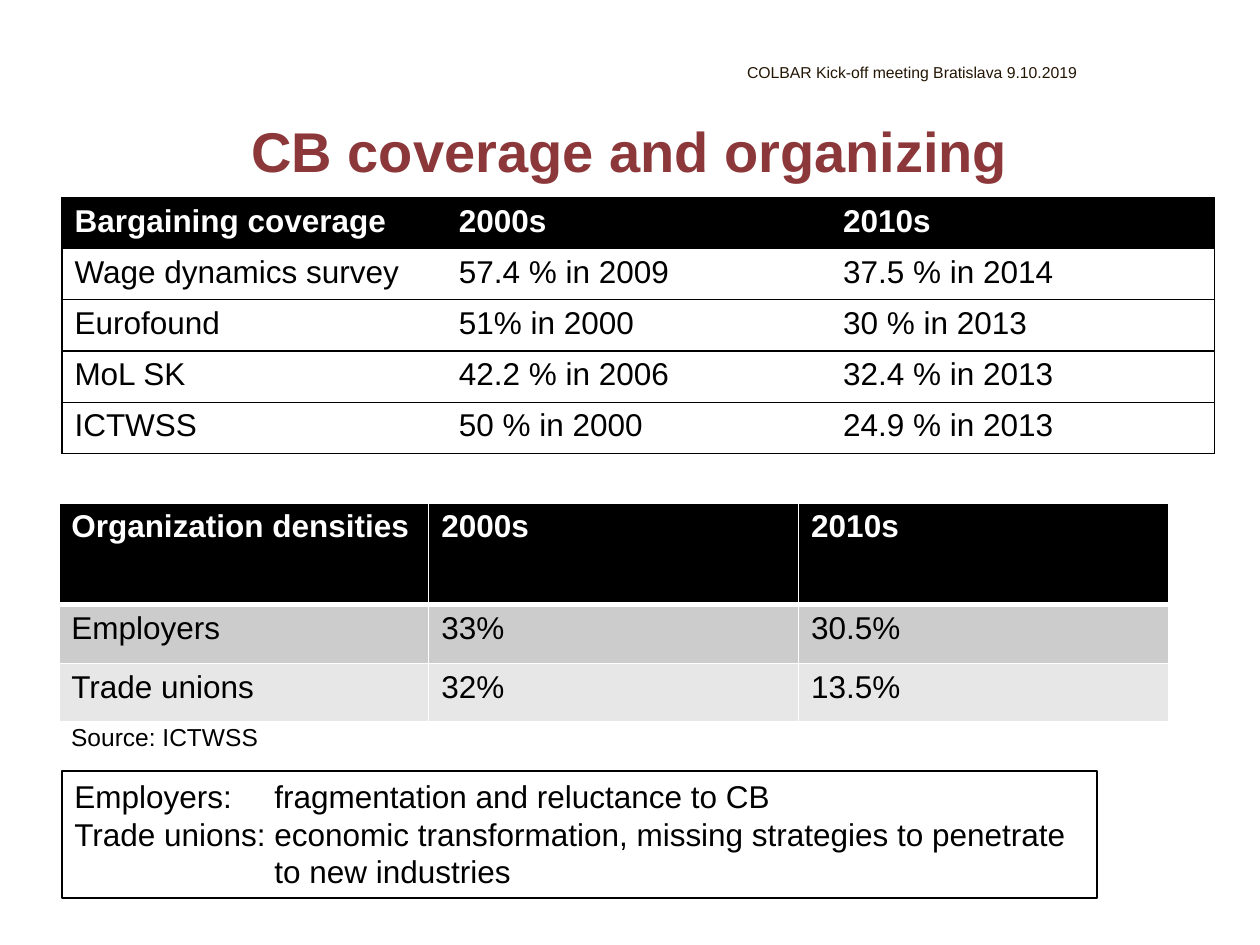
from dataclasses import dataclass

from pptx import Presentation
from pptx.dml.color import RGBColor
from pptx.enum.shapes import MSO_SHAPE
from pptx.enum.text import MSO_ANCHOR, PP_ALIGN
from pptx.oxml.xmlchemy import OxmlElement
from pptx.util import Pt


@dataclass(frozen=True)
class Theme:
    font: str = "Arial"
    black: str = "000000"
    white: str = "FFFFFF"
    title_color: str = "8C383A"
    meeting_color: str = "241605"
    bands: tuple = ("CCCCCC", "E7E7E7")
    title_size: float = 32
    body_size: float = 18
    source_size: float = 14
    meeting_size: float = 9


THEME = Theme()
TITLE = "CB coverage and organizing"
MEETING = "COLBAR Kick-off meeting Bratislava 9.10.2019"
SOURCE = "Source: ICTWSS"
COVERAGE = [
    ("Bargaining coverage", "2000s", "2010s"),
    ("Wage dynamics survey", "57.4 % in 2009", "37.5 % in 2014"),
    ("Eurofound", "51% in 2000", "30 % in 2013"),
    ("MoL SK", "42.2 % in 2006", "32.4 % in 2013"),
    ("ICTWSS", "50 % in 2000", "24.9 % in 2013"),
]
DENSITIES = [
    ("Organization densities", "2000s", "2010s"),
    ("Employers", "33%", "30.5%"),
    ("Trade unions", "32%", "13.5%"),
]
REASONS = [
    ("Employers:", "fragmentation and reluctance to CB"),
    ("Trade unions:", "economic transformation, missing strategies to penetrate to new industries"),
]
REASON_INDENT = 114.3


def style(paragraph, size, color, bold=False):
    paragraph.font.name = THEME.font
    paragraph.font.size = Pt(size)
    paragraph.font.bold = bold
    paragraph.font.color.rgb = RGBColor.from_string(color)


def add_text(slide, text, box, size, color, bold=False, align=PP_ALIGN.LEFT, anchor=MSO_ANCHOR.TOP):
    frame = slide.shapes.add_textbox(*map(Pt, box)).text_frame
    frame.word_wrap = True
    frame.vertical_anchor = anchor
    paragraph = frame.paragraphs[0]
    paragraph.text = text
    paragraph.alignment = align
    style(paragraph, size, color, bold)


def set_border(cell, side, color, width):
    line = OxmlElement(f"a:ln{side}")
    line.set("w", str(Pt(width)))
    fill = OxmlElement("a:solidFill" if color else "a:noFill")
    if color:
        value = OxmlElement("a:srgbClr")
        value.set("val", color)
        fill.append(value)
    line.append(fill)
    cell._tc.get_or_add_tcPr().append(line)


def coverage_border(side, row, column):
    inner = (side == "L" and column > 0) or (side == "R" and column < len(COVERAGE[0]) - 1)
    return (None if inner else THEME.black), 0.75


def density_border(side, row, column):
    under_header = (side, row) in (("B", 0), ("T", 1))
    return THEME.white, 3 if under_header else 1


def add_grid(slide, rows, left, top, column_width, heights, fills, border):
    columns = len(rows[0])
    table = slide.shapes.add_table(
        len(rows), columns, Pt(left), Pt(top), Pt(column_width * columns), Pt(sum(heights))
    ).table
    table.horz_banding = False
    for column in table.columns:
        column.width = Pt(column_width)
    for r, values in enumerate(rows):
        table.rows[r].height = Pt(heights[r])
        for c, value in enumerate(values):
            cell = table.cell(r, c)
            cell.text = value
            color = THEME.black if r else THEME.white
            style(cell.text_frame.paragraphs[0], THEME.body_size, color, bold=r == 0)
            for side in "LRTB":
                set_border(cell, side, *border(side, r, c))
            cell.fill.solid()
            cell.fill.fore_color.rgb = RGBColor.from_string(fills[r])


def add_reasons(slide):
    shape = slide.shapes.add_shape(MSO_SHAPE.RECTANGLE, Pt(35.4), Pt(440.4), Pt(591.4), Pt(72.7))
    shape.shadow.inherit = False
    shape.fill.background()
    shape.line.color.rgb = RGBColor.from_string(THEME.black)
    shape.line.width = Pt(1)
    frame = shape.text_frame
    frame.word_wrap = True
    frame.vertical_anchor = MSO_ANCHOR.TOP
    for index, reason in enumerate(REASONS):
        paragraph = frame.add_paragraph() if index else frame.paragraphs[0]
        paragraph.text = "\t".join(reason)
        paragraph.alignment = PP_ALIGN.LEFT
        properties = paragraph._p.get_or_add_pPr()
        properties.set("marL", str(Pt(REASON_INDENT)))
        properties.set("indent", str(-Pt(REASON_INDENT)))
        style(paragraph, THEME.body_size, THEME.black)


def main():
    """Build the slide on bargaining coverage and organization densities."""
    presentation = Presentation()
    presentation.slide_width, presentation.slide_height = Pt(720), Pt(540)
    slide = presentation.slides.add_slide(presentation.slide_layouts[6])
    add_text(slide, TITLE, (36, 60.5, 648, 51), THEME.title_size, THEME.title_color,
             bold=True, align=PP_ALIGN.CENTER, anchor=MSO_ANCHOR.MIDDLE)
    add_grid(slide, COVERAGE, 35.4, 113, 219.6, [29.2] * 5,
             [THEME.black] + [THEME.white] * 4, coverage_border)
    add_text(slide, MEETING, (419.8, 32.4, 300.2, 18), THEME.meeting_size, THEME.meeting_color)
    add_grid(slide, DENSITIES, 33.6, 287.3, 211.4, [58.3, 33.5, 33.5],
             [THEME.black, *THEME.bands], density_border)
    add_text(slide, SOURCE, (33.6, 409, 122.4, 24.2), THEME.source_size, THEME.black)
    add_reasons(slide)
    presentation.save("out.pptx")


if __name__ == "__main__":
    main()
